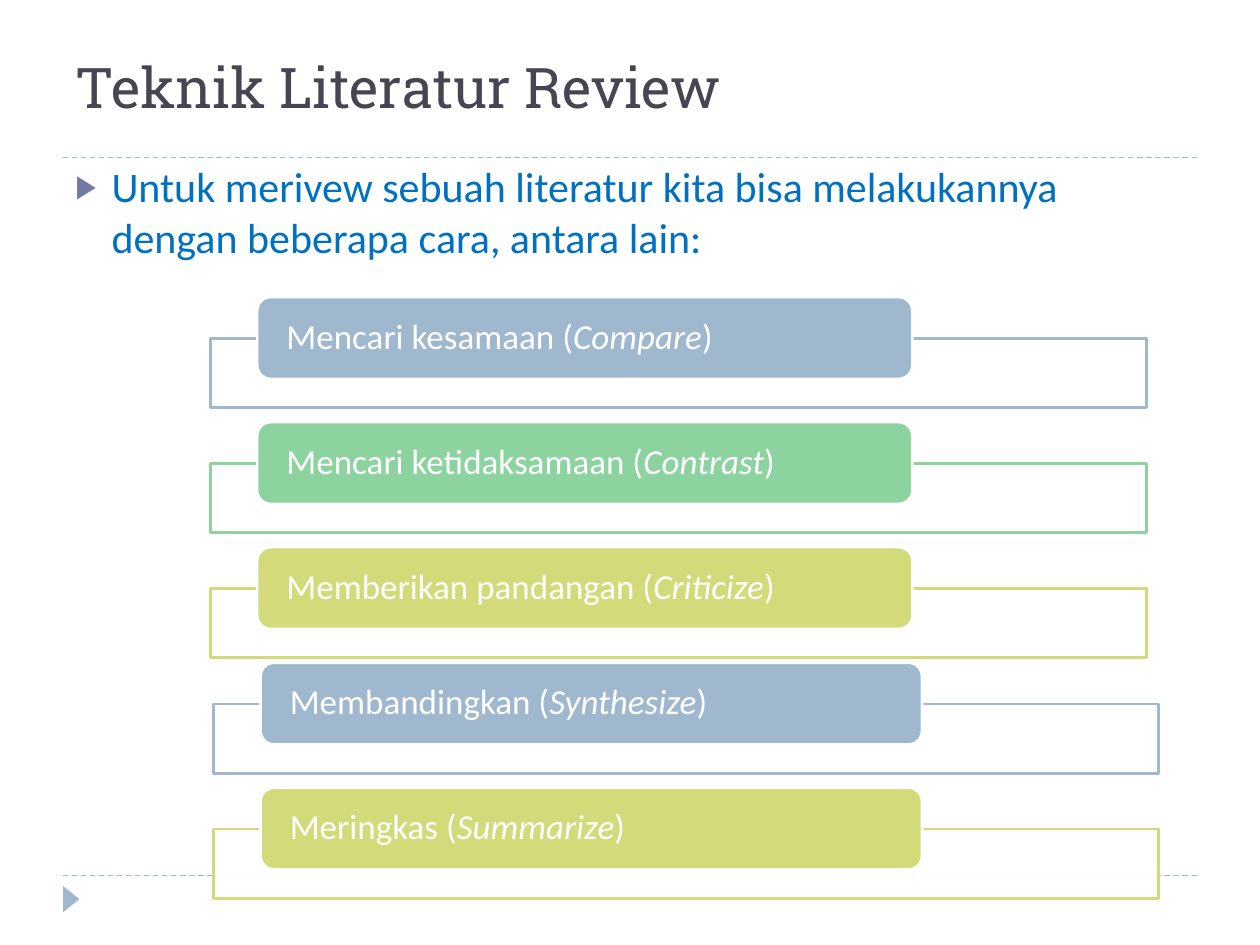
from pptx import Presentation
from pptx.dml.color import RGBColor
from pptx.enum.dml import MSO_LINE
from pptx.enum.shapes import MSO_CONNECTOR, MSO_SHAPE
from pptx.enum.text import MSO_ANCHOR, PP_ALIGN
from pptx.oxml.ns import qn
from pptx.util import Cm, Pt
from lxml.etree import SubElement

WHITE = RGBColor(0xFF, 0xFF, 0xFF)
BLUE_GREY = RGBColor(0x9F, 0xB8, 0xCD)
GREEN = RGBColor(0x8D, 0xD3, 0xA0)
LIME = RGBColor(0xD2, 0xDA, 0x7A)
INK = RGBColor(0x46, 0x46, 0x53)
BLUE = RGBColor(0x00, 0x70, 0xC0)

MARGIN, CONTENT_WIDTH = 1.27, 22.86
TECHNIQUE_PITCH = 2.52


def style_font(font, name, size, color):
    font.name, font.size = name, Pt(size)
    font.color.rgb = color


def add_filled_shape(slide, kind, left, top, width, height, fill):
    shape = slide.shapes.add_shape(kind, Cm(left), Cm(top), Cm(width), Cm(height))
    shape.shadow.inherit = False
    shape.fill.solid()
    shape.fill.fore_color.rgb = fill
    return shape


def add_text(slide, left, top, width, height, text):
    box = slide.shapes.add_textbox(Cm(left), Cm(top), Cm(width), Cm(height))
    box.text_frame.word_wrap = True
    box.text_frame.text = text
    return box.text_frame


def add_rule(slide, left, top, width):
    rule = slide.shapes.add_connector(
        MSO_CONNECTOR.STRAIGHT, Cm(left), Cm(top), Cm(left + width), Cm(top))
    rule.line.color.rgb = BLUE_GREY
    rule.line.width = Pt(0.75)
    rule.line.dash_style = MSO_LINE.DASH
    SubElement(rule._element.spPr, qn("a:effectLst"))


def add_frame(slide, left, width):
    """Dashed rules under the title and above the footer, with the footer arrow."""
    for top in (17.65, 3.18):
        add_rule(slide, left, top, width)
    arrow = add_filled_shape(slide, MSO_SHAPE.ISOSCELES_TRIANGLE,
                             left - 0.1, 17.96, 0.53, 0.33, BLUE_GREY)
    arrow.rotation = 90
    arrow.line.fill.background()


def add_title(slide, left, top, width, height):
    frame = add_text(slide, left, top, width, height, "Teknik Literatur Review")
    frame.vertical_anchor = MSO_ANCHOR.BOTTOM
    style_font(frame.paragraphs[0].font, "Roboto Slab", 32, INK)


def add_intro(slide, left, top, width, height):
    frame = add_text(
        slide, left, top, width, height,
        "Untuk merivew sebuah literatur kita bisa melakukannya "
        "dengan beberapa cara, antara lain:")
    intro = frame.paragraphs[0]
    intro.space_before = Pt(6)
    style_font(intro.font, "Calibri", 24, BLUE)
    props = intro._p.get_or_add_pPr()
    props.set("marL", str(Cm(0.73)))
    props.set("indent", str(Cm(-0.73)))
    bullet = [("buClr", {}), ("buSzPct", {"val": "76000"}),
              ("buFont", {"typeface": "Wingdings 3"}), ("buChar", {"char": "▶"})]
    bullet[2][1]["typeface"] = "Calibri"
    # Bullet elements must precede the default run properties
    run_defaults = props.find(qn("a:defRPr"))
    for tag, attributes in bullet:
        element = SubElement(props, qn(f"a:{tag}"), attributes)
        if tag == "buClr":
            SubElement(element, qn("a:srgbClr"), {"val": "727CA3"})
        if run_defaults is not None:
            run_defaults.addprevious(element)


def add_technique(slide, left, top, width, action, term, color):
    """An outlined panel with a coloured label over its top edge."""
    panel = add_filled_shape(slide, MSO_SHAPE.RECTANGLE,
                             left, top + 0.83, width, 1.4, WHITE)
    panel.line.color.rgb = color
    panel.line.width = Pt(1.5)
    panel_color = panel._element.spPr.find(qn("a:solidFill"))[0]
    SubElement(panel_color, qn("a:alpha"), {"val": "90000"})

    label = add_filled_shape(slide, MSO_SHAPE.ROUNDED_RECTANGLE,
                             left + 0.05 * width, top, 0.7 * width, 1.65, color)
    label.line.color.rgb = WHITE
    label.line.width = Pt(1.5)
    frame = label.text_frame
    frame.margin_left = frame.margin_right = Cm(0.51)
    frame.margin_top = frame.margin_bottom = 0
    frame.vertical_anchor = MSO_ANCHOR.MIDDLE
    caption = frame.paragraphs[0]
    caption.alignment = PP_ALIGN.LEFT
    caption.line_spacing = 0.9
    style_font(caption.font, "Calibri", 20, WHITE)
    for text, italic in ((f"{action} (", False), (term, True), (")", False)):
        run = caption.add_run()
        run.text = text
        run.font.italic = italic


def add_technique_list(slide, left, top, width, techniques):
    for row, technique in enumerate(techniques):
        add_technique(slide, left, top + row * TECHNIQUE_PITCH, width, *technique)


def main():
    deck = Presentation()
    deck.slide_width, deck.slide_height = Cm(25.4), Cm(19.05)
    slide = deck.slides.add_slide(deck.slide_layouts[6])
    add_frame(slide, MARGIN, CONTENT_WIDTH)
    add_intro(slide, MARGIN, 3.12, CONTENT_WIDTH, 2.59)
    add_title(slide, MARGIN, 0.43, CONTENT_WIDTH, 2.11)
    add_technique_list(slide, 4.24, 5.99, 18.87, [
        ("Mencari kesamaan", "Compare", BLUE_GREY),
        ("Mencari ketidaksamaan", "Contrast", GREEN),
        ("Memberikan pandangan", "Criticize", LIME),
    ])
    add_technique_list(slide, 4.3, 13.36, 19.05, [
        ("Membandingkan", "Synthesize", BLUE_GREY),
        ("Meringkas", "Summarize", LIME),
    ])
    deck.save("out.pptx")


if __name__ == "__main__":
    main()
